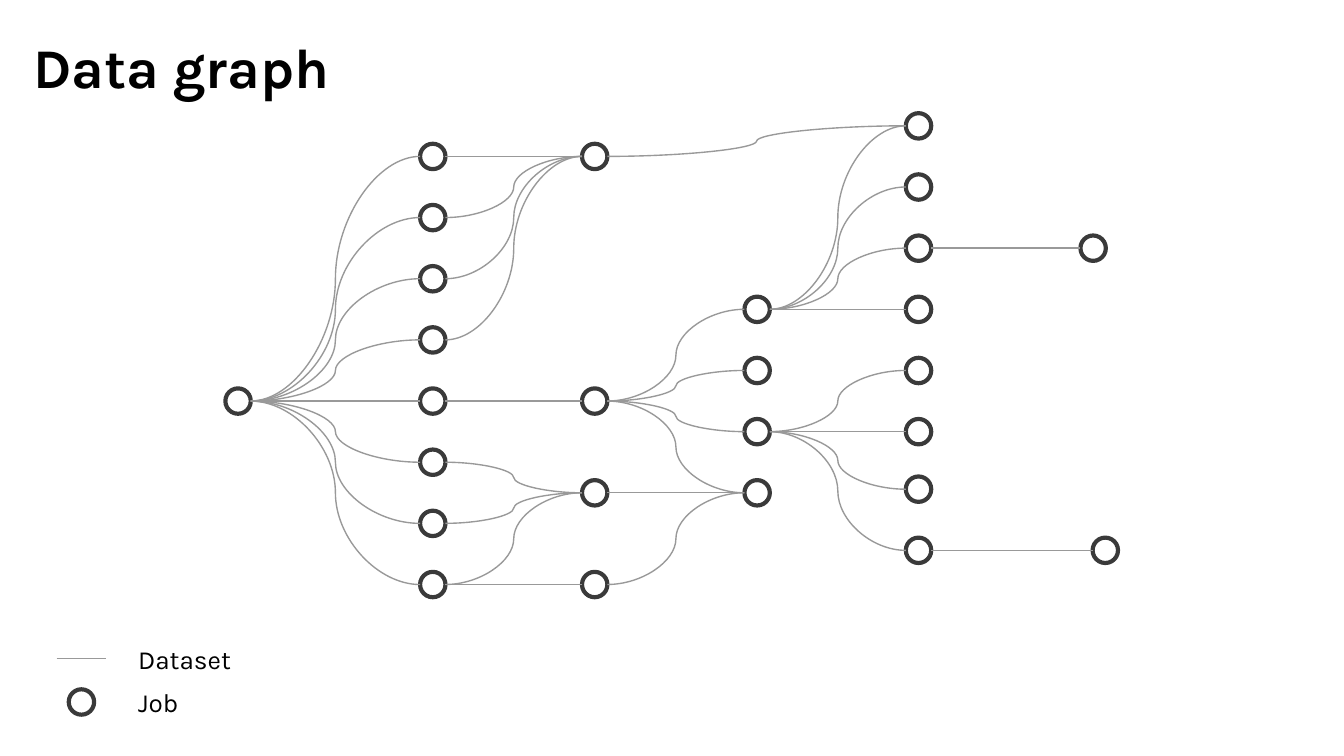
from collections import namedtuple
from pptx import Presentation
from pptx.dml.color import RGBColor
from pptx.enum.shapes import MSO_CONNECTOR as Link, MSO_SHAPE as Shape
from pptx.enum.text import MSO_ANCHOR as Anchor
from pptx.oxml import parse_xml
from pptx.util import Cm, Pt

Box = namedtuple("Box", "left top width height")

RING = 0.48
BOTTOM_ROW = 7.5
COLUMNS = {"a": 0.24, "b": 3.92, "c": 6.98, "d": 10.05, "e": 13.1, "f": 16.4, "g": 16.63}
ROWS = {
    "a": [4.5],
    "b": [0.5 + row for row in range(8)],
    "c": [0.5, 4.5, 6, 7.5],
    "d": [3, 4, 5, 6],
    "e": [0, 1, 2, 3, 4, 5, 5.94, 6.94],
    "f": [2],
    "g": [6.94],
}
DATASETS = {
    "a0": "b0 b1 b2 b3 b4 b5 b6 b7",
    "b0": "c0",
    "b1": "c0",
    "b2": "c0",
    "b3": "c0",
    "b4": "c1",
    "b5": "c2",
    "b6": "c2",
    "b7": "c2 c3",
    "c0": "e0",
    "c1": "d0 d1 d2 d3",
    "c2": "d3",
    "c3": "d3",
    "d0": "e0 e1 e2 e3",
    "d2": "e4 e5 e6 e7",
    "e2": "f0",
    "e7": "g0",
}


def color(value):
    return RGBColor.from_string(value)


def add_text(page, box, text, size, bold=False, anchor=Anchor.TOP):
    frame = page.shapes.add_textbox(*map(Cm, box)).text_frame
    frame.word_wrap = True
    frame.vertical_anchor = anchor
    frame.margin_left = frame.margin_right = Cm(0.25)
    frame.margin_top = frame.margin_bottom = Cm(0.25)
    span = frame.paragraphs[0].add_run()
    span.text = text
    span.font.name = "Karla"
    span.font.size = Pt(size)
    span.font.bold = bold
    span.font.color.rgb = color("000000")


def add_job(page, x, y):
    ring = page.shapes.add_shape(
        Shape.OVAL, Cm(x - RING / 2), Cm(y - RING / 2), Cm(RING), Cm(RING)
    )
    ring.shadow.inherit = False
    ring.fill.background()
    ring.line.color.rgb = color("3A3A3A")
    ring.line.width = Pt(2.25)


def add_dataset(page, start, end):
    curve = page.shapes.add_connector(Link.CURVE, *map(Cm, (*start, *end)))
    curve.line.color.rgb = color("999999")
    curve.line.width = Pt(0.75)
    curve._element.spPr.append(
        parse_xml('<a:effectLst xmlns:a="http://schemas.openxmlformats.org/drawingml/2006/main"/>')
    )


def add_title(page, box):
    add_text(page, box, "Data graph", 30, bold=True)


def add_graph(page, box):
    step = (box.height - RING) / BOTTOM_ROW
    jobs = {
        f"{column}{index}": (box.left + COLUMNS[column], box.top + RING / 2 + row * step)
        for column, rows in ROWS.items()
        for index, row in enumerate(rows)
    }
    for x, y in jobs.values():
        add_job(page, x, y)
    for source, targets in DATASETS.items():
        x, y = jobs[source]
        for target in targets.split():
            end_x, end_y = jobs[target]
            add_dataset(page, (x + RING / 2, y), (end_x - RING / 2, end_y))


def add_legend(page, box):
    symbol_width = 0.94
    label_left = box.left + 1.29
    label_width = box.width - 1.29
    row_height = box.height / 2
    dataset_y = box.top + row_height / 2
    job_y = dataset_y + row_height
    add_dataset(page, (box.left, dataset_y), (box.left + symbol_width, dataset_y))
    add_job(page, box.left + symbol_width / 2, job_y)
    for text, y in (("Dataset", dataset_y), ("Job", job_y)):
        label = Box(label_left, y - 0.29, label_width, 0.58)
        add_text(page, label, text, 14, anchor=Anchor.MIDDLE)


def main():
    deck = Presentation()
    deck.slide_width, deck.slide_height = Cm(25.4), Cm(14.29)
    page = deck.slides.add_slide(deck.slide_layouts[6])
    add_graph(page, Box(4.26, 2.14, 16.87, 9.15))
    add_title(page, Box(0.38, 0.36, 13.36, 1.7))
    add_legend(page, Box(1.07, 12.04, 3.65, 1.64))
    deck.save("out.pptx")


if __name__ == "__main__":
    main()
